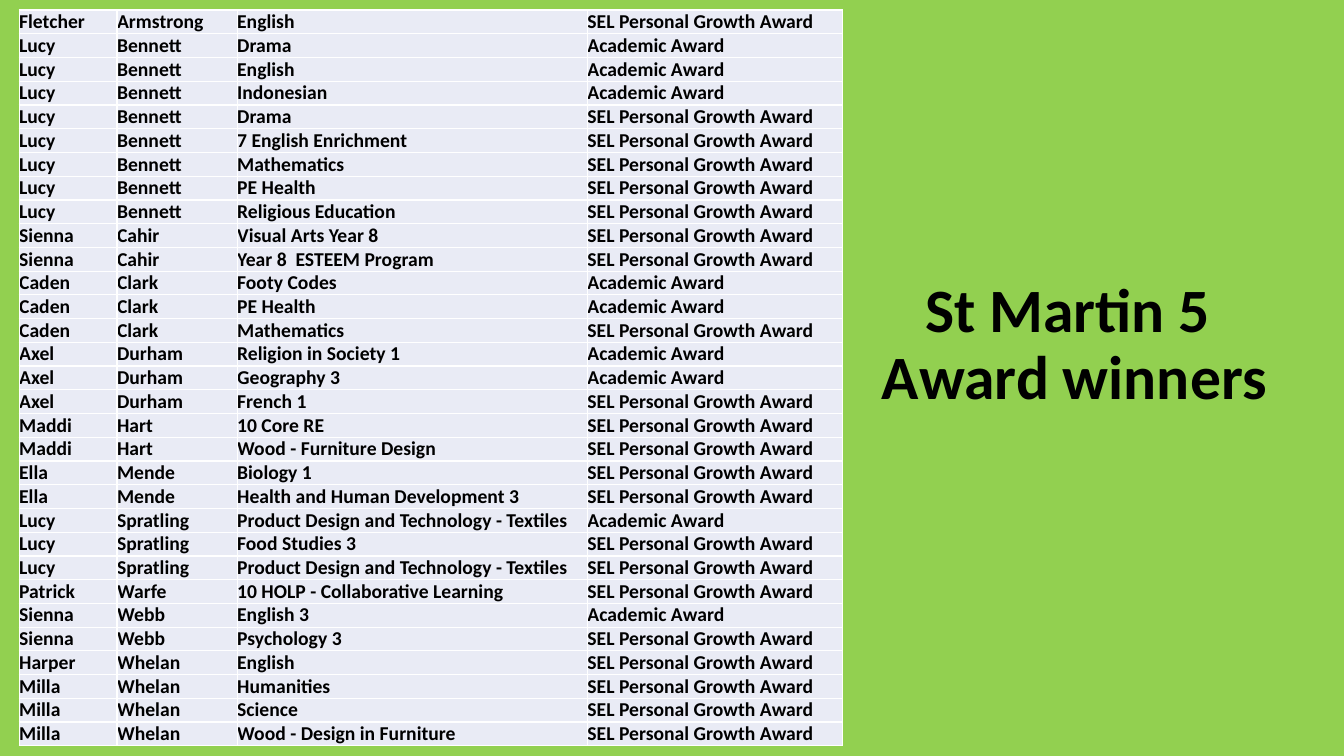
import pptx
import pptx.dml.color
import pptx.enum.text
import pptx.oxml
import pptx.oxml.ns
import pptx.util
from pptx.util import Inches

GREEN = pptx.dml.color.RGBColor(0x92, 0xD0, 0x50)
PALE_BLUE = pptx.dml.color.RGBColor(0xE9, 0xEB, 0xF5)
WHITE = pptx.dml.color.RGBColor(0xFF, 0xFF, 0xFF)
BLACK = pptx.dml.color.RGBColor(0, 0, 0)
FONT = "Calibri"
COLUMN_WIDTHS = (0.97, 1.19, 3.47, 2.53)

# First name, surname, subjects with an academic award, subjects with a growth award
STUDENTS = [
    ("Fletcher", "Armstrong", [], ["English"]),
    ("Lucy", "Bennett", ["Drama", "English", "Indonesian"],
     ["Drama", "7 English Enrichment", "Mathematics", "PE Health", "Religious Education"]),
    ("Sienna", "Cahir", [], ["Visual Arts Year 8", "Year 8  ESTEEM Program"]),
    ("Caden", "Clark", ["Footy Codes", "PE Health"], ["Mathematics"]),
    ("Axel", "Durham", ["Religion in Society 1", "Geography 3"], ["French 1"]),
    ("Maddi", "Hart", [], ["10 Core RE", "Wood - Furniture Design"]),
    ("Ella", "Mende", [], ["Biology 1", "Health and Human Development 3"]),
    ("Lucy", "Spratling", ["Product Design and Technology - Textiles"],
     ["Food Studies 3", "Product Design and Technology - Textiles"]),
    ("Patrick", "Warfe", [], ["10 HOLP - Collaborative Learning"]),
    ("Sienna", "Webb", ["English 3"], ["Psychology 3"]),
    ("Harper", "Whelan", [], ["English"]),
    ("Milla", "Whelan", [], ["Humanities", "Science", "Wood - Design in Furniture"]),
]


def award_rows():
    """List one row per award, academic awards first for each student."""
    rows = []
    for first, surname, academic, growth in STUDENTS:
        rows += [(first, surname, subject, "Academic Award") for subject in academic]
        rows += [(first, surname, subject, "SEL Personal Growth Award") for subject in growth]
    return rows


def set_font(para, size):
    para.font.name = FONT
    para.font.size = pptx.util.Pt(size)
    para.font.bold = True
    para.font.color.rgb = BLACK


def add_borders(cell):
    properties = cell._tc.get_or_add_tcPr()
    for index, side in enumerate(("lnL", "lnR", "lnT", "lnB")):
        properties.insert(index, pptx.oxml.parse_xml(
            f'<a:{side} {pptx.oxml.ns.nsdecls("a")} w="12700"><a:solidFill>'
            f'<a:srgbClr val="{WHITE}"/></a:solidFill></a:{side}>'))


def fill_cell(cell, text):
    cell.text = text
    cell.margin_left = cell.margin_right = cell.margin_top = cell.margin_bottom = 0
    cell.vertical_anchor = pptx.enum.text.MSO_ANCHOR.BOTTOM
    cell.fill.solid()
    cell.fill.fore_color.rgb = PALE_BLUE
    set_font(cell.text_frame.paragraphs[0], 14)
    add_borders(cell)


def add_award_table(page, left, top, width, height):
    rows = award_rows()
    table = page.shapes.add_table(len(rows), len(COLUMN_WIDTHS), Inches(left), Inches(top),
                                  Inches(width), Inches(height)).table
    table.first_row = False
    table.horz_banding = False
    # Columns share the width in proportion, rows share the height equally
    for column, share in zip(table.columns, COLUMN_WIDTHS):
        column.width = Inches(width * share / sum(COLUMN_WIDTHS))
    for row, values in zip(table.rows, rows):
        row.height = Inches(height / len(rows))
        for cell, text in zip(row.cells, values):
            fill_cell(cell, text)


def add_title(page, left, top, width, height):
    box = page.shapes.add_textbox(Inches(left), Inches(top), Inches(width), Inches(height))
    frame = box.text_frame
    frame.word_wrap = True
    frame.vertical_anchor = pptx.enum.text.MSO_ANCHOR.MIDDLE
    para = frame.paragraphs[0]
    para.text = "St Martin 5\v Award winners"
    para.alignment = pptx.enum.text.PP_ALIGN.CENTER
    para.line_spacing = 0.9
    set_font(para, 44)


def main():
    deck = pptx.Presentation()
    deck.slide_width, deck.slide_height = Inches(13.33), Inches(7.5)
    page = deck.slides.add_slide(deck.slide_layouts[6])
    page.background.fill.solid()
    page.background.fill.fore_color.rgb = GREEN
    add_title(page, 8.29, 2.28, 4.6, 2.31)
    add_award_table(page, 0.19, 0.1, 8.17, 7.3)
    deck.save("out.pptx")


if __name__ == "__main__":
    main()
